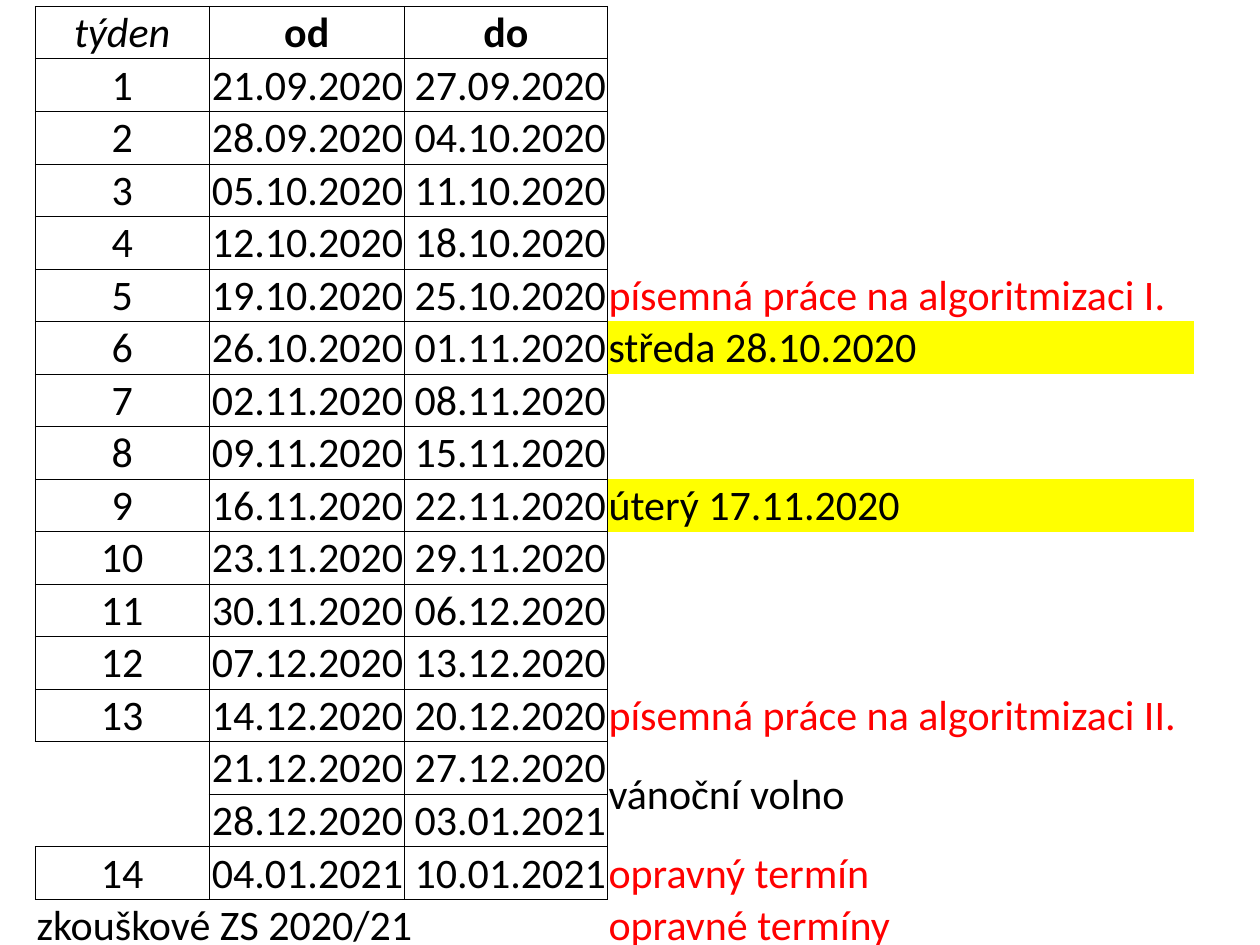
from pptx import Presentation
from pptx import util as u
from pptx.dml.color import RGBColor
from pptx.enum import text
from pptx.oxml import ns
from lxml import etree

BLACK = RGBColor(0, 0, 0)
RED = RGBColor(255, 0, 0)
YELLOW = RGBColor(255, 255, 0)
FONT = "Calibri"
LEFT, TOP, WIDTH, HEIGHT = 0.28, 0.05, 9.21, 7.39
COLUMN_WIDTHS = (1.38, 1.55, 1.61, 4.66)
ROW_HEIGHT = 0.38
SIDES = "LRTB"
ALIGN = text.PP_ALIGN
ANCHOR = text.MSO_ANCHOR

SCHEDULE = [
    ("týden", "od", "do", ""),
    ("1", "21.09.2020", "27.09.2020", ""),
    ("2", "28.09.2020", "04.10.2020", ""),
    ("3", "05.10.2020", "11.10.2020", ""),
    ("4", "12.10.2020", "18.10.2020", ""),
    ("5", "19.10.2020", "25.10.2020", "písemná práce na algoritmizaci I."),
    ("6", "26.10.2020", "01.11.2020", "středa 28.10.2020"),
    ("7", "02.11.2020", "08.11.2020", ""),
    ("8", "09.11.2020", "15.11.2020", ""),
    ("9", "16.11.2020", "22.11.2020", "úterý 17.11.2020"),
    ("10", "23.11.2020", "29.11.2020", ""),
    ("11", "30.11.2020", "06.12.2020", ""),
    ("12", "07.12.2020", "13.12.2020", ""),
    ("13", "14.12.2020", "20.12.2020", "písemná práce na algoritmizaci II."),
    ("", "21.12.2020", "27.12.2020", "vánoční volno"),
    ("", "28.12.2020", "03.01.2021", ""),
    ("14", "04.01.2021", "10.01.2021", "opravný termín"),
    ("zkouškové ZS 2020/21", "", "", "opravné termíny"),
]
EXAM_ROW = len(SCHEDULE) - 1
HOLIDAY_ROWS = (14, 15)
FREE_DAY_ROWS = (6, 9)
TEST_ROWS = (5, 13, 16, EXAM_ROW)


def cell_sides(row, column):
    if row == EXAM_ROW:
        return "T" if column < 3 else ""
    if column == 3:
        return "L"
    if column == 0 and row in HOLIDAY_ROWS:
        return "RT" if row == HOLIDAY_ROWS[0] else "RB"
    return SIDES


def cell_align(row, column):
    if column == 3 or row == EXAM_ROW:
        return ALIGN.LEFT
    return ALIGN.CENTER if row == 0 or column == 0 else ALIGN.RIGHT


def draw_borders(cell, sides):
    properties = cell._tc.get_or_add_tcPr()
    for index, side in enumerate(SIDES):
        line = etree.Element(ns.qn(f"a:ln{side}"), w=str(u.Pt(0.5)))
        if side in sides:
            fill = etree.SubElement(line, ns.qn("a:solidFill"))
            etree.SubElement(fill, ns.qn("a:srgbClr"), val=str(BLACK))
        else:
            etree.SubElement(line, ns.qn("a:noFill"))
        properties.insert(index, line)


def write_cell(cell, row, column, wording):
    cell.margin_left = cell.margin_right = cell.margin_top = u.Inches(0.01)
    cell.margin_bottom = 0
    holiday_note = column == 3 and row in HOLIDAY_ROWS
    cell.vertical_anchor = ANCHOR.MIDDLE if holiday_note else ANCHOR.BOTTOM
    if column == 3 and row in FREE_DAY_ROWS:
        cell.fill.solid()
        cell.fill.fore_color.rgb = YELLOW
    else:
        cell.fill.background()
    draw_borders(cell, cell_sides(row, column))
    if not wording:
        return
    paragraph = cell.text_frame.paragraphs[0]
    paragraph.alignment = cell_align(row, column)
    run = paragraph.add_run()
    run.text = wording
    run.font.name = FONT
    run.font.size = u.Pt(24)
    run.font.italic = row == 0 and column == 0
    run.font.bold = row == 0 and column > 0
    run.font.color.rgb = RED if column == 3 and row in TEST_ROWS else BLACK


def add_schedule(slide):
    frame = slide.shapes.add_table(
        len(SCHEDULE), len(COLUMN_WIDTHS),
        *(u.Inches(length) for length in (LEFT, TOP, WIDTH, HEIGHT)))
    weeks = frame.table
    weeks.first_row = weeks.horz_banding = False
    for column, width in zip(weeks.columns, COLUMN_WIDTHS):
        column.width = u.Inches(width)
    for row in weeks.rows:
        row.height = u.Inches(ROW_HEIGHT)
    frame.height = u.Inches(HEIGHT)
    for row, entries in enumerate(SCHEDULE):
        for column, wording in enumerate(entries):
            write_cell(weeks.cell(row, column), row, column, wording)
    weeks.cell(HOLIDAY_ROWS[0], 3).merge(weeks.cell(HOLIDAY_ROWS[1], 3))
    weeks.cell(EXAM_ROW, 0).merge(weeks.cell(EXAM_ROW, 2))


def main():
    deck = Presentation()
    deck.slide_width, deck.slide_height = u.Inches(10), u.Inches(7.5)
    add_schedule(deck.slides.add_slide(deck.slide_layouts[6]))
    deck.save("out.pptx")


if __name__ == "__main__":
    main()
